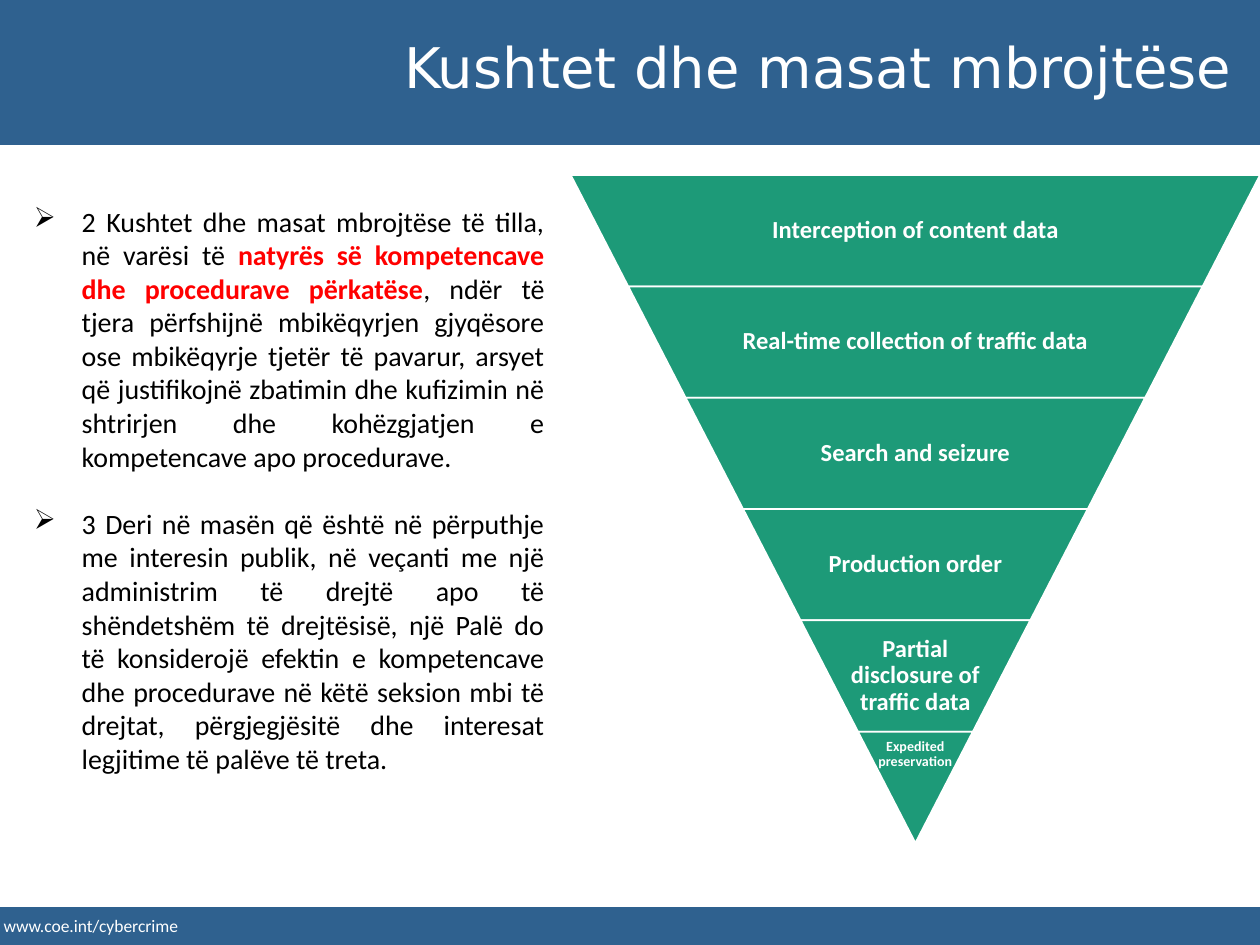
"""Build a slide on conditions and safeguards with a funnel of powers."""
import dataclasses

import lxml.etree
import pptx
import pptx.dml.color
import pptx.enum.shapes
import pptx.enum.text
import pptx.oxml.ns
import pptx.util

Inches = pptx.util.Inches
Pt = pptx.util.Pt
Shape = pptx.enum.shapes.MSO_SHAPE
Align = pptx.enum.text.PP_ALIGN
Anchor = pptx.enum.text.MSO_ANCHOR


@dataclasses.dataclass(frozen=True)
class Theme:
    band: str = "2F618F"
    level: str = "1D9A78"
    light: str = "FFFFFF"
    dark: str = "000000"
    accent: str = "FF0000"
    body: str = "Calibri"
    head: str = "DejaVu Sans"
    title: int = 32
    text: int = 16
    label: int = 14
    foot: int = 10
    small: int = 8


def tint(code):
    return pptx.dml.color.RGBColor.from_string(code)


def write(para, text, *, size, color, font, bold=False):
    run = para.add_run()
    run.text = text
    run.font.size = Pt(size)
    run.font.name = font
    run.font.bold = bold
    run.font.color.rgb = tint(color)


class Page:
    def __init__(self, deck, theme):
        self.theme = theme
        self.slide = deck.slides.add_slide(deck.slide_layouts[6])

    def shape(self, kind, box, fill, line=None):
        item = self.slide.shapes.add_shape(kind, *map(Inches, box))
        item.shadow.inherit = False
        item.fill.solid()
        item.fill.fore_color.rgb = tint(fill)
        if line:
            item.line.color.rgb = tint(line)
            item.line.width = Pt(1)
        else:
            item.line.fill.background()
        return item

    def frame(self, box, pad=(0.1, 0.05, 0.1, 0.05), anchor=Anchor.TOP):
        frame = self.slide.shapes.add_textbox(*map(Inches, box)).text_frame
        frame.word_wrap = True
        frame.vertical_anchor = anchor
        (frame.margin_left, frame.margin_top,
         frame.margin_right, frame.margin_bottom) = map(Inches, pad)
        return frame

    def line(self, box, text, align=Align.LEFT, **style):
        para = self.frame(box).paragraphs[0]
        para.alignment = align
        write(para, text, color=self.theme.light, **style)

    def bullets(self, box, items, gap):
        frame = self.frame(box)
        for num, parts in enumerate(items):
            para = frame.add_paragraph() if num else frame.paragraphs[0]
            props = para._p.get_or_add_pPr()
            props.set("marL", str(Inches(0.38)))
            props.set("indent", str(-Inches(0.38)))
            mark = lxml.etree.SubElement(props, pptx.oxml.ns.qn("a:buChar"))
            mark.set("char", "➢")
            para.alignment = Align.JUSTIFY
            if num:
                para.space_before = Pt(gap)
            for text, strong in parts:
                color = self.theme.accent if strong else self.theme.dark
                write(para, text, size=self.theme.text, color=color,
                      font=self.theme.body, bold=strong)

    def funnel(self, left, top, width, height, names):
        count = len(names)
        step = height / count
        mid = left + width / 2
        for num, name in enumerate(names):
            wide = width * (count - num) / count
            high = top + num * step
            block = self.shape(Shape.TRAPEZOID, (mid - wide / 2, high, wide, step),
                               self.theme.level, self.theme.light)
            block.rotation = 180
            block.adjustments[0] = width / count / 2 / step
            tip = num == count - 1
            span = wide if tip else wide * 0.65
            pad = (0, 0.06, 0, 0) if tip else (0.02,) * 4
            frame = self.frame((mid - span / 2, high, span, step), pad,
                               Anchor.TOP if tip else Anchor.MIDDLE)
            para = frame.paragraphs[0]
            para.alignment = Align.CENTER
            para.line_spacing = 0.9
            write(para, name, size=self.theme.small if tip else self.theme.label,
                  color=self.theme.light, font=self.theme.body, bold=True)


def main():
    deck = pptx.Presentation()
    deck.slide_width, deck.slide_height = Inches(10), Inches(7.5)
    theme = Theme()
    page = Page(deck, theme)

    for top, height in ((0, 1.15), (7.2, 0.3)):
        page.shape(Shape.RECTANGLE, (0, top, 10, height), theme.band)
    page.line((-0.07, 7.21, 3.52, 0.27), "www.coe.int/cybercrime",
              size=theme.foot, font=theme.body)
    page.line((1.53, 0.21, 8.35, 0.64), "Kushtet dhe masat mbrojtëse",
              Align.RIGHT, size=theme.title, font=theme.head)

    page.bullets((0.17, 1.57, 4.25, 4.41), [
        [("2 Kushtet dhe masat mbrojtëse të tilla, në varësi të ", False),
         ("natyrës së kompetencave dhe procedurave përkatëse", True),
         (", ndër të tjera përfshijnë mbikëqyrjen gjyqësore ose mbikëqyrje "
          "tjetër të pavarur, arsyet që justifikojnë zbatimin dhe kufizimin "
          "në shtrirjen dhe kohëzgjatjen e kompetencave apo procedurave.",
          False)],
        [("3 Deri në masën që është në përputhje me interesin publik, në "
          "veçanti me një administrim të drejtë apo të shëndetshëm të "
          "drejtësisë, një Palë do të konsiderojë efektin e kompetencave dhe "
          "procedurave në këtë seksion mbi të drejtat, përgjegjësitë dhe "
          "interesat legjitime të palëve të treta.", False)],
    ], gap=19.2)

    page.funnel(4.53, 1.39, 5.47, 5.3, [
        "Interception of content data",
        "Real-time collection of traffic data",
        "Search and seizure",
        "Production order",
        "Partial disclosure of traffic data",
        "Expedited preservation",
    ])
    deck.save("out.pptx")


if __name__ == "__main__":
    main()
